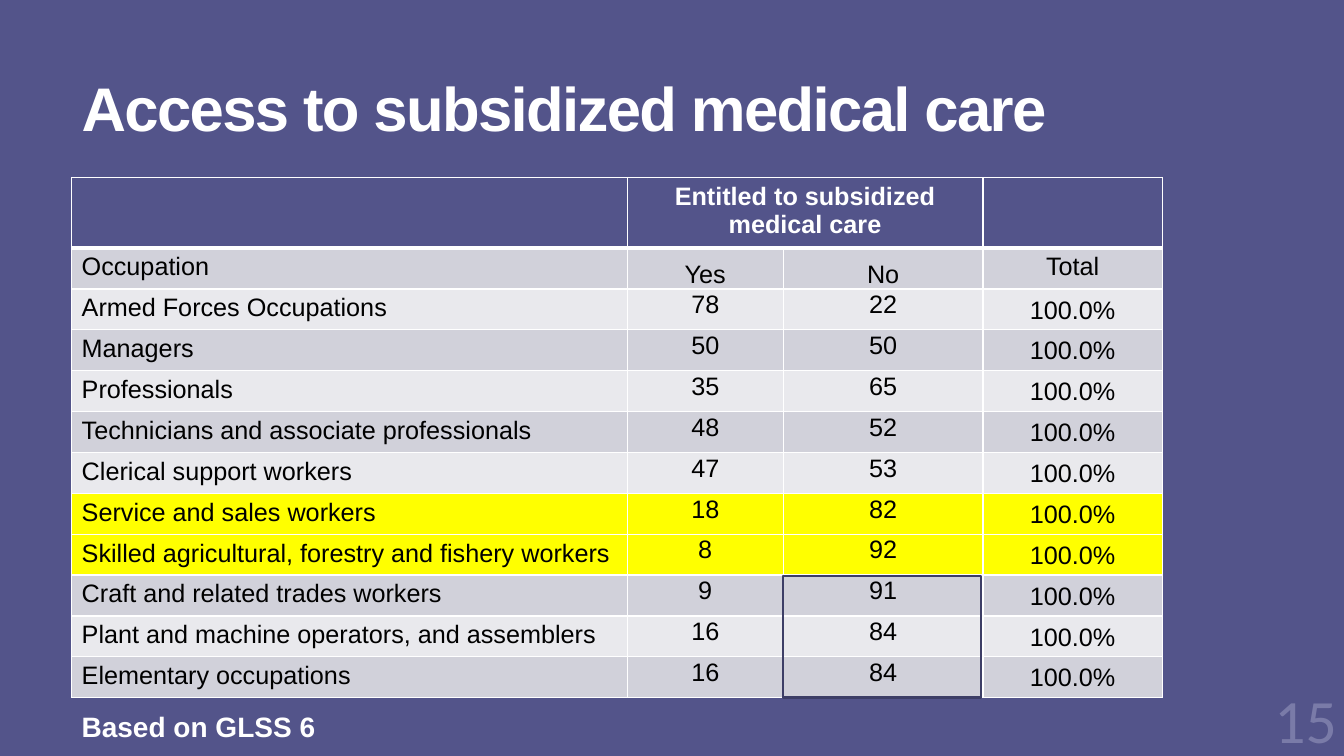
"""Build the slide on access to subsidized medical care by occupation."""
from lxml.etree import SubElement
from pptx import Presentation
from pptx.dml.color import RGBColor
from pptx.enum.shapes import MSO_SHAPE as Shape
from pptx.enum.text import MSO_ANCHOR as Anchor, MSO_AUTO_SIZE as AutoSize, PP_ALIGN as Align
from pptx.oxml.ns import qn
from pptx.util import Inches, Pt

INDIGO = RGBColor(0x53, 0x54, 0x8A)
DARK_INDIGO = RGBColor(0x3D, 0x3E, 0x66)
FAINT_INDIGO = RGBColor(0x7A, 0x7B, 0xA8)
WHITE = RGBColor(0xFF, 0xFF, 0xFF)
BLACK = RGBColor(0x00, 0x00, 0x00)
GREY = RGBColor(0xD1, 0xD1, 0xDA)
LIGHT_GREY = RGBColor(0xE9, 0xE9, 0xED)
YELLOW = RGBColor(0xFF, 0xFF, 0x00)

COLUMN_SHARES = (41.33, 11.63, 14.85, 13.35)
HIGHLIGHTED = ("Service and sales workers",
               "Skilled agricultural, forestry and fishery workers")
ACCESS = (
    ("Armed Forces Occupations", 78),
    ("Managers", 50),
    ("Professionals", 35),
    ("Technicians and associate professionals", 48),
    ("Clerical support workers", 47),
    (HIGHLIGHTED[0], 18),
    (HIGHLIGHTED[1], 8),
    ("Craft and related trades workers", 9),
    ("Plant and machine operators, and assemblers", 16),
    ("Elementary occupations", 16),
)


class SlideBuilder:
    """Hold the style and the slide; lengths are percentages of the slide's size."""

    font = "Arial"

    def __init__(self, deck):
        self.deck = deck
        self.slide = deck.slides.add_slide(deck.slide_layouts[6])
        background = self.slide.background.fill
        background.solid()
        background.fore_color.rgb = INDIGO

    def across(self, share):
        return round(self.deck.slide_width * share / 100)

    def down(self, share):
        return round(self.deck.slide_height * share / 100)

    def place(self, left, top, width, height):
        return self.across(left), self.down(top), self.across(width), self.down(height)

    def set_words(self, frame, words, size, color, bold=False, align=Align.LEFT, font=font):
        frame.text = words
        paragraph = frame.paragraphs[0]
        paragraph.alignment = align
        for run in paragraph.runs:
            run.font.size = Pt(size)
            run.font.bold = bold
            run.font.color.rgb = color
            if font:
                run.font.name = font
        return paragraph

    def text(self, area, words, size, color, wrap=True, **style):
        frame = self.slide.shapes.add_textbox(*self.place(*area)).text_frame
        frame.word_wrap = wrap
        self.set_words(frame, words, size, color, **style)
        return frame

    def outline(self, area, color, weight):
        box = self.slide.shapes.add_shape(Shape.RECTANGLE, *self.place(*area))
        box.shadow.inherit = False
        box.fill.background()
        box.line.color.rgb = color
        box.line.width = Pt(weight)

    def table(self, area, column_shares, row_count):
        grid = self.slide.shapes.add_table(
            row_count, len(column_shares), *self.place(*area)).table
        grid.horz_banding = False
        for column, share in zip(grid.columns, column_shares):
            column.width = self.across(share)
        return grid

    def cell(self, cell, words, fill, color=BLACK, bold=False, align=Align.CENTER,
             anchor=Anchor.TOP, side=None, top=1, bottom=1):
        paragraph = self.set_words(cell.text_frame, words, 18, color, bold, align)
        cell.vertical_anchor = anchor
        if side is not None:
            cell.margin_left = cell.margin_right = Inches(side)
            cell.margin_top = cell.margin_bottom = 0
            paragraph.line_spacing = 1.07
        properties = cell._tc.get_or_add_tcPr()
        for edge, weight in (("L", 1), ("R", 1), ("T", top), ("B", bottom)):
            line = SubElement(properties, qn(f"a:ln{edge}"), w=str(Pt(weight)))
            SubElement(SubElement(line, qn("a:solidFill")), qn("a:srgbClr"), val=str(WHITE))
        cell.fill.solid()
        cell.fill.fore_color.rgb = fill


def add_access_table(builder):
    grid = builder.table((5.33, 23.47, sum(COLUMN_SHARES), 64.93),
                         COLUMN_SHARES, len(ACCESS) + 2)
    grid.cell(0, 1).merge(grid.cell(0, 2))
    for column, heading in enumerate(("", "Entitled to subsidized medical care", "", "")):
        builder.cell(grid.cell(0, column), heading, INDIGO, WHITE, bold=True, bottom=3)

    for column, label in enumerate(("Occupation", "Yes", "No", "Total")):
        answer = column in (1, 2)
        builder.cell(grid.cell(1, column), label, GREY, top=3,
                     align=Align.CENTER if column else Align.LEFT,
                     anchor=Anchor.BOTTOM if answer else Anchor.TOP,
                     side=0.06 if answer else None)

    for row, (occupation, yes) in enumerate(ACCESS, start=2):
        band = LIGHT_GREY if row % 2 == 0 else GREY
        fill = YELLOW if occupation in HIGHLIGHTED else band
        builder.cell(grid.cell(row, 0), occupation, fill, align=Align.LEFT)
        for column, percent in enumerate((yes, 100 - yes), start=1):
            builder.cell(grid.cell(row, column), str(percent), fill, side=0.07)
        builder.cell(grid.cell(row, 3), "100.0%", fill, anchor=Anchor.MIDDLE, side=0.06)


def main():
    deck = Presentation()
    deck.slide_width, deck.slide_height = Inches(13.33), Inches(7.5)
    builder = SlideBuilder(deck)

    title = builder.text((5.33, 2.8, 88.37, 24.13), "Access to subsidized medical care",
                         44, WHITE, bold=True)
    title.vertical_anchor = Anchor.MIDDLE
    heading = title.paragraphs[0]
    heading.line_spacing = 0.85
    heading.runs[0].font._element.set("spc", "-120")

    add_access_table(builder)
    builder.outline((58.29, 76.13, 14.7, 16.13), DARK_INDIGO, 1.5)

    source = builder.text((5.33, 93.2, 19.05, 5.87), "Based on GLSS 6",
                          20, WHITE, wrap=False, bold=True)
    source.auto_size = AutoSize.SHAPE_TO_FIT_TEXT

    number = builder.text((93, 90.27, 6.47, 9.73), "15", 44, FAINT_INDIGO,
                          align=Align.RIGHT, font=None)
    number.margin_left = number.margin_right = number.margin_top = number.margin_bottom = 0

    deck.save("out.pptx")


if __name__ == "__main__":
    main()
